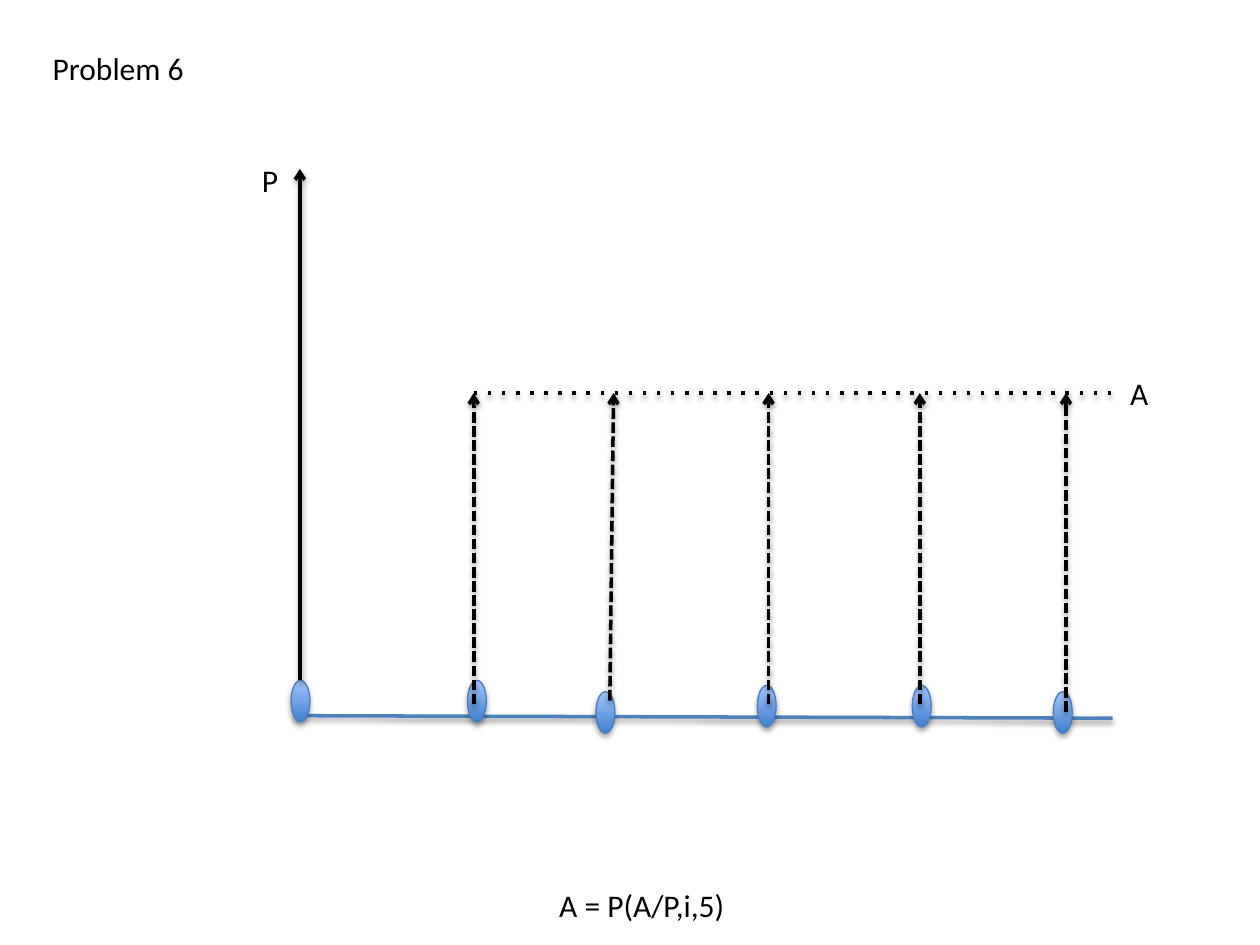
from typing import NamedTuple, Optional

from lxml import etree
from pptx import Presentation
from pptx.dml.color import RGBColor
from pptx.enum.shapes import MSO_CONNECTOR, MSO_SHAPE
from pptx.enum.text import MSO_AUTO_SIZE
from pptx.oxml.ns import qn
from pptx.util import Emu, Pt

STRAIGHT = MSO_CONNECTOR.STRAIGHT
ELLIPSE = MSO_SHAPE.OVAL
FIT_TEXT = MSO_AUTO_SIZE.SHAPE_TO_FIT_TEXT

PX = 9144  # 100 px to the inch
FONT = "Calibri"
BLACK, AXIS_BLUE, DOT_EDGE = "000000", "4F81BD", "4B7EBC"
DOT_BOTTOM, DOT_TOP = "3F80CE", "A4C4FF"
DOT_WIDTH, DOT_HEIGHT = 15, 33
LEVEL = 312  # height at which the annuity arrows end


class Label(NamedTuple):
    text: str
    left: int
    top: int
    width: int


class Line(NamedTuple):
    x1: int
    y1: int
    x2: int
    y2: int
    color: str = BLACK
    dash: Optional[str] = None
    arrow: bool = True


class Period(NamedTuple):
    left: int
    top: int


class Payment(NamedTuple):
    foot_x: int
    foot_y: int
    tip_x: int


LABELS = [
    Label("Problem 6", 32, 34, 126),
    Label("A", 887, 292, 35),
    Label("P", 198, 123, 33),
    Label("A = P(A/P,i,5)", 434, 698, 156),
]
PERIODS = [Period(231, 540), Period(371, 540), Period(473, 549),
           Period(601, 544), Period(724, 544), Period(836, 549)]
PAYMENTS = [Payment(376, 559, 376), Payment(484, 556, 487), Payment(610, 559, 610),
            Payment(730, 559, 730), Payment(846, 565, 846)]


def px(length: int) -> Emu:
    return Emu(length * PX)


def rgb(value: str) -> RGBColor:
    return RGBColor.from_string(value)


def add_shadow(shape, alpha: int, distance: float) -> None:
    effects = etree.SubElement(shape._element.spPr, qn("a:effectLst"))
    shadow = etree.SubElement(effects, qn("a:outerShdw"), blurRad=str(Pt(3.1)),
                              dist=str(Pt(distance)), dir="5400000", rotWithShape="0")
    color = etree.SubElement(shadow, qn("a:srgbClr"), val=BLACK)
    etree.SubElement(color, qn("a:alpha"), val=str(alpha * 1000))


def draw_label(page, label: Label) -> None:
    box = page.shapes.add_textbox(px(label.left), px(label.top), px(label.width), px(40))
    frame = box.text_frame
    frame.word_wrap = False
    frame.auto_size = FIT_TEXT
    frame.text = label.text
    font = frame.paragraphs[0].runs[0].font
    font.name, font.size = FONT, Pt(18)
    font.color.rgb = rgb(BLACK)


def draw_line(page, line: Line) -> None:
    connector = page.shapes.add_connector(
        STRAIGHT, px(line.x1), px(line.y1), px(line.x2), px(line.y2))
    connector.line.color.rgb = rgb(line.color)
    connector.line.width = Pt(2)
    outline = connector._element.spPr.find(qn("a:ln"))
    if line.dash:
        etree.SubElement(outline, qn("a:prstDash"), val=line.dash)
    if line.arrow:
        etree.SubElement(outline, qn("a:tailEnd"), type="arrow")
    add_shadow(connector, 38, 1.6)


def draw_period(page, period: Period) -> None:
    dot = page.shapes.add_shape(
        ELLIPSE, px(period.left), px(period.top), px(DOT_WIDTH), px(DOT_HEIGHT))
    dot.fill.gradient()
    dot.fill.gradient_angle = 90
    for stop, color, position in zip(dot.fill.gradient_stops, (DOT_BOTTOM, DOT_TOP), (0, 1)):
        stop.color.rgb = rgb(color)
        stop.position = position
    dot.line.color.rgb = rgb(DOT_EDGE)
    dot.line.width = Pt(0.75)
    add_shadow(dot, 35, 1.8)


def main() -> None:
    deck = Presentation()
    deck.slide_width, deck.slide_height = px(1000), px(750)
    page = deck.slides.add_slide(deck.slide_layouts[6])

    # Time axis with its periods
    draw_line(page, Line(233, 568, 883, 570, AXIS_BLUE, arrow=False))
    for period in PERIODS:
        draw_period(page, period)

    # Present value, annuity payments and their common level
    draw_line(page, Line(238, 540, 238, 134))
    for payment in PAYMENTS:
        draw_line(page, Line(payment.foot_x, payment.foot_y, payment.tip_x, LEVEL,
                             dash="sysDash"))
    draw_line(page, Line(376, LEVEL, 883, LEVEL, dash="dot", arrow=False))

    # Title, symbols and formula
    for label in LABELS:
        draw_label(page, label)

    deck.save("out.pptx")


if __name__ == "__main__":
    main()
